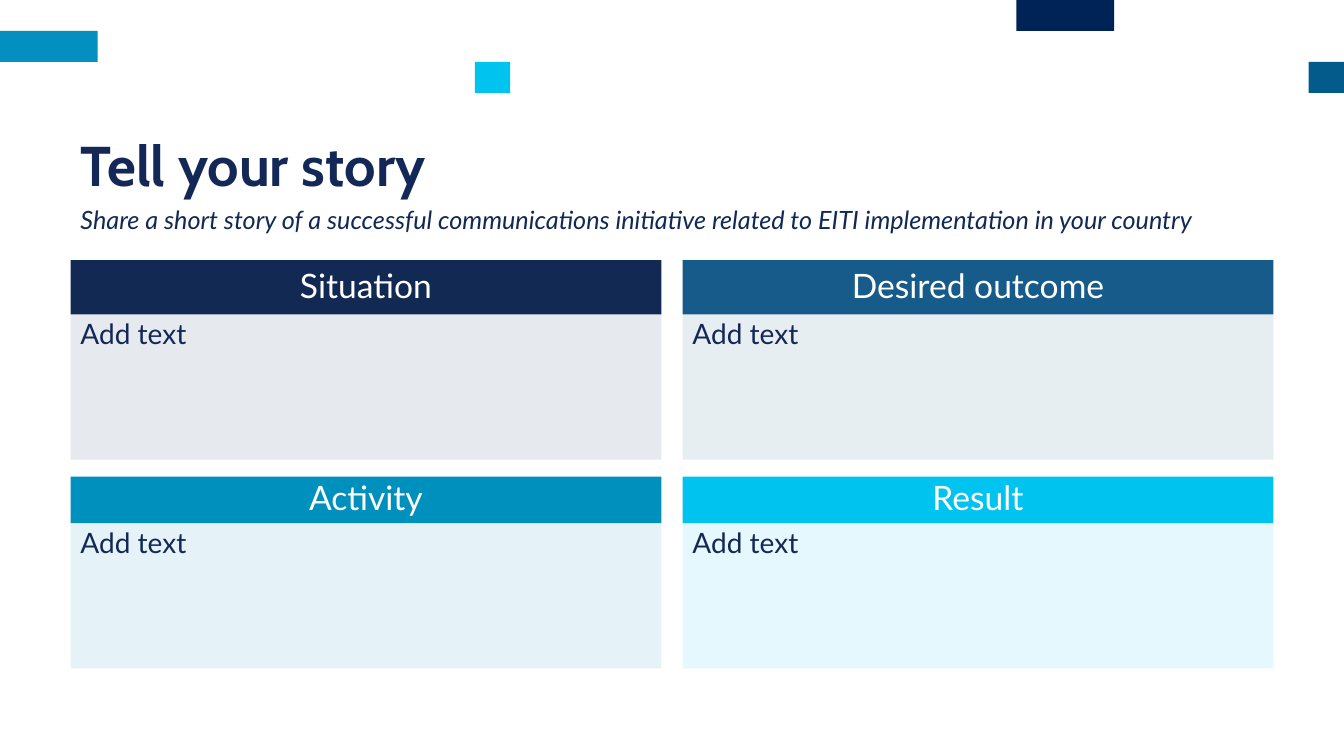
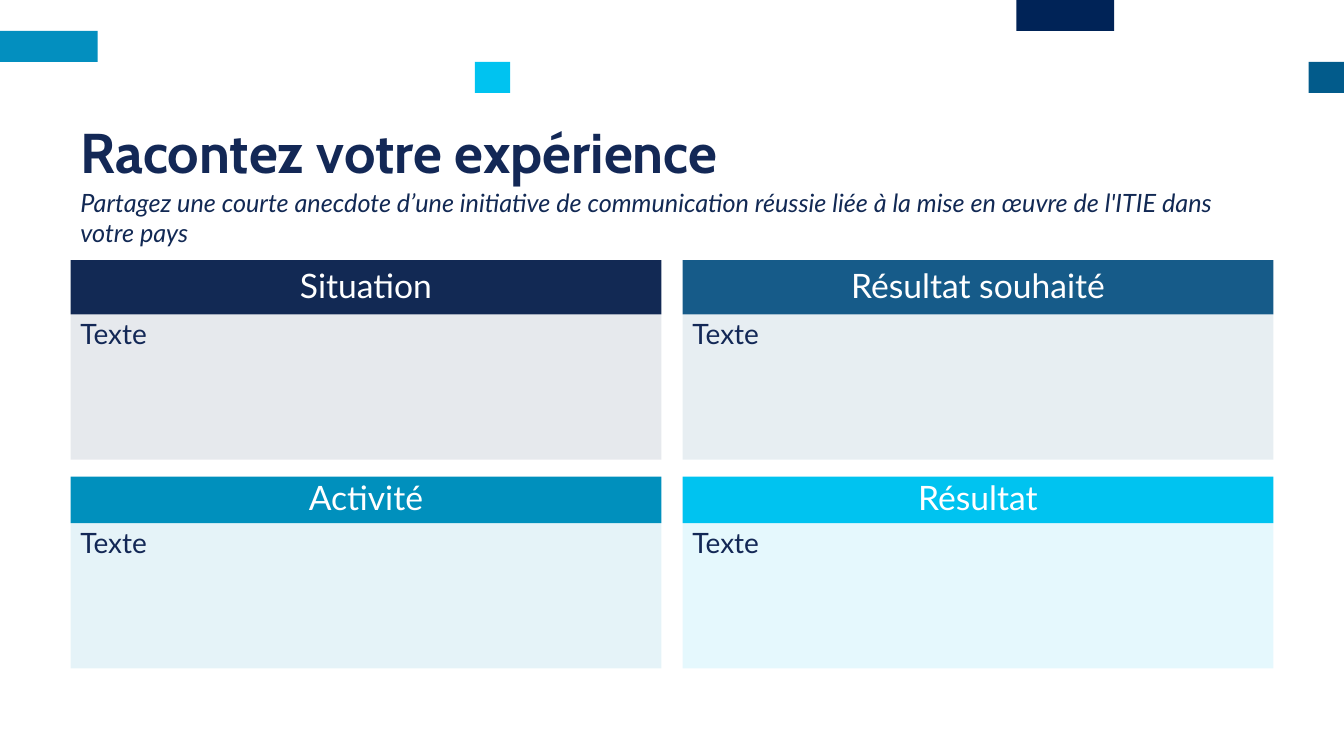
from lxml import etree
from pptx import Presentation
from pptx.dml.color import RGBColor
from pptx.enum.shapes import MSO_SHAPE
from pptx.enum.text import MSO_ANCHOR, PP_ALIGN
from pptx.oxml.ns import qn
from pptx.util import Inches, Pt

RECT = MSO_SHAPE.RECTANGLE
TOP, MIDDLE = MSO_ANCHOR.TOP, MSO_ANCHOR.MIDDLE
LEFT, CENTER = PP_ALIGN.LEFT, PP_ALIGN.CENTER

COLORS = {
    "title": "132856", "navy": "122954", "blue": "165B89", "teal": "0090BD",
    "cyan": "00C3F0", "white": "FFFFFF",
    "band_navy": "002357", "band_blue": "025B8B", "band_teal": "038FBF",
}
WIDTH, HEIGHT = 13.33, 7.5
MARGIN = 0.7
CONTENT_W = WIDTH - 2 * MARGIN
COLUMN_GAP, ROW_GAP = 0.21, 0.17
COLUMN_W = (CONTENT_W - COLUMN_GAP) / 2
GRID_TOP, BODY_H = 2.58, 1.44
ROWS = [(0.54, 0.94), (0.46, 0.84)]
CARD_COLORS = ["navy", "blue", "teal", "cyan"]
TINT = 10
TITLE_H = 0.73

BAND_H = HEIGHT * 0.041
LONG, SHORT = 0.97, 0.35
BANDS = [
    (10.08, 0, LONG, "band_navy"),
    (WIDTH - SHORT, 2, SHORT, "band_blue"),
    (0, 1, LONG, "band_teal"),
    (4.71, 2, SHORT, "cyan"),
]

STORIES = [
    {
        "title": "Tell your story", "title_top": 1.31,
        "prompt": "Share a short story of a successful communications initiative "
                  "related to EITI implementation in your country",
        "prompt_top": 1.98, "prompt_h": 0.4,
        "headings": ["Situation", "Desired outcome", "Activity", "Result"],
        "body": "Add text",
    },
    {
        "title": "Racontez votre expérience", "title_top": 1.18,
        "prompt": "Partagez une courte anecdote d’une initiative de communication "
                  "réussie liée à la mise en œuvre de l'ITIE dans votre pays",
        "prompt_top": 1.81, "prompt_h": 0.71,
        "headings": ["Situation", "Résultat souhaité", "Activité", "Résultat"],
        "body": "Texte",
    },
]


def rgb(name):
    """Return the named colour."""
    return RGBColor.from_string(COLORS[name])


def add_block(slide, box, color, opacity=100):
    """Add a plain rectangle with a solid or tinted fill."""
    block = slide.shapes.add_shape(RECT, *map(Inches, box))
    block.shadow.inherit = False
    block.line.fill.background()
    block.fill.solid()
    block.fill.fore_color.rgb = rgb(color)
    if opacity < 100:
        tone = block.fill._xPr.find(".//" + qn("a:srgbClr"))
        etree.SubElement(tone, qn("a:alpha"), val=str(opacity * 1000))
    return block


def write(shape, text, size, color, font="Lato", align=LEFT, anchor=TOP,
          spacing=1.0, before=0, after=0, bold=False, italic=False):
    """Put one formatted paragraph into a shape."""
    frame = shape.text_frame
    frame.word_wrap = True
    frame.vertical_anchor = anchor
    frame.text = text
    paragraph = frame.paragraphs[0]
    paragraph.alignment = align
    paragraph.line_spacing = spacing
    paragraph.space_before, paragraph.space_after = Pt(before), Pt(after)
    style = paragraph.runs[0].font
    style.name, style.size = font, Pt(size)
    style.bold, style.italic = bold, italic
    style.color.rgb = rgb(color)


def add_bands(slide):
    """Scatter the coloured bands over the top rows of the slide."""
    for left, row, width, color in BANDS:
        add_block(slide, (left, row * BAND_H, width, BAND_H), color)


def add_heading(slide, story):
    """Add the title and the prompt below it."""
    title = slide.shapes.add_textbox(
        *map(Inches, (MARGIN, story["title_top"], CONTENT_W, TITLE_H)))
    write(title, story["title"], 40, "title", font="Cabin", anchor=MIDDLE,
          spacing=0.89, bold=True)
    prompt = slide.shapes.add_textbox(
        *map(Inches, (MARGIN, story["prompt_top"], CONTENT_W, story["prompt_h"])))
    write(prompt, story["prompt"], 18, "navy", italic=True)


def add_card(slide, left, top, header_h, spacing, color, heading, body):
    """Add a header bar with a tinted text area under it."""
    header = add_block(slide, (left, top, COLUMN_W, header_h), color)
    write(header, heading, 24, "white", align=CENTER, anchor=MIDDLE,
          spacing=spacing, before=10, after=2)
    area = add_block(slide, (left, top + header_h, COLUMN_W, BODY_H), color, TINT)
    write(area, body, 20, "title", spacing=0.94, before=10, after=2)


def add_cards(slide, story):
    """Lay out the four cards in two rows and two columns."""
    cards = iter(zip(CARD_COLORS, story["headings"]))
    top = GRID_TOP
    for header_h, spacing in ROWS:
        for column in range(2):
            color, heading = next(cards)
            left = MARGIN + column * (COLUMN_W + COLUMN_GAP)
            add_card(slide, left, top, header_h, spacing, color, heading, story["body"])
        top += header_h + BODY_H + ROW_GAP


def main():
    """Build one story slide per language and save the deck."""
    deck = Presentation()
    deck.slide_width, deck.slide_height = Inches(WIDTH), Inches(HEIGHT)
    for story in STORIES:
        slide = deck.slides.add_slide(deck.slide_layouts[6])
        add_bands(slide)
        add_heading(slide, story)
        add_cards(slide, story)
    deck.save("out.pptx")


if __name__ == "__main__":
    main()
